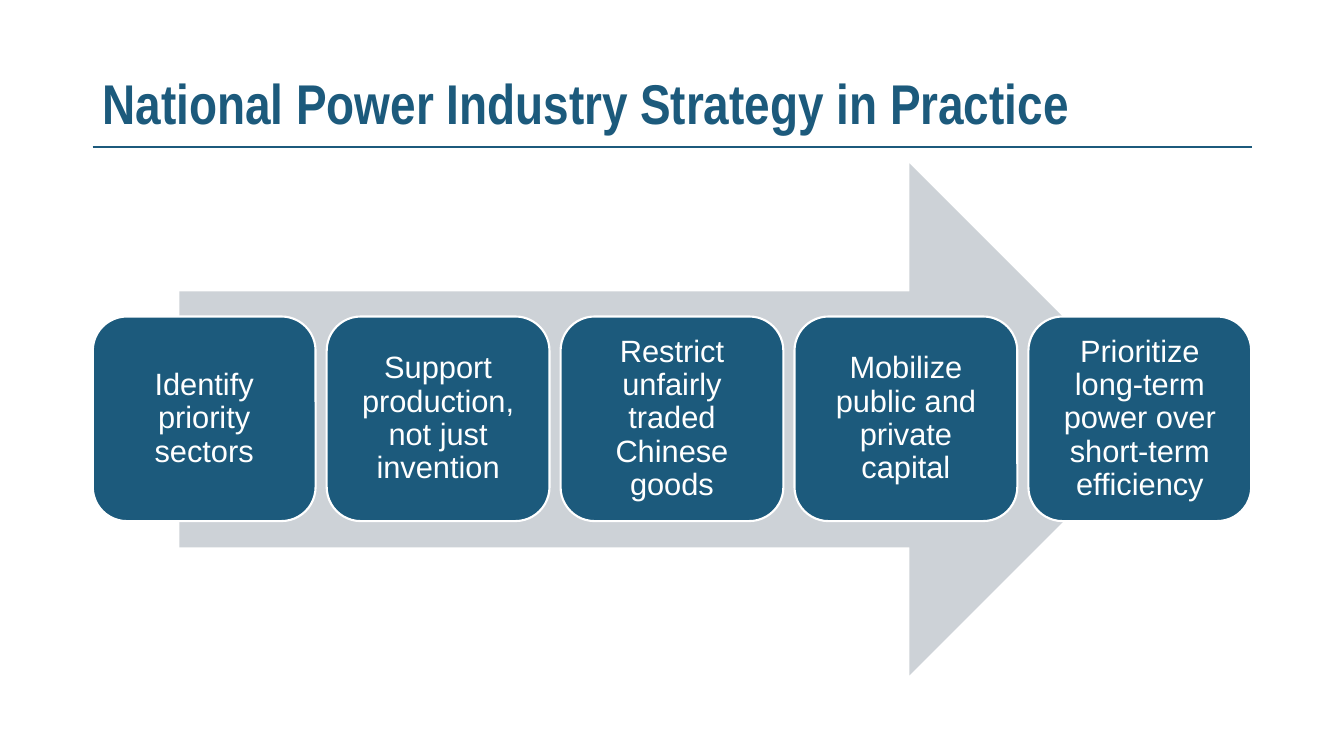
from pptx import Presentation
from pptx.dml.color import RGBColor
from pptx.enum.shapes import MSO_CONNECTOR, MSO_SHAPE
from pptx.enum.text import MSO_ANCHOR, PP_ALIGN
from pptx.oxml.ns import qn
from pptx.util import Inches, Pt
from lxml import etree

STRAIGHT = MSO_CONNECTOR.STRAIGHT
ARROW, ROUNDED = MSO_SHAPE.RIGHT_ARROW, MSO_SHAPE.ROUNDED_RECTANGLE
BOTTOM, MIDDLE = MSO_ANCHOR.BOTTOM, MSO_ANCHOR.MIDDLE
LEFT, CENTER = PP_ALIGN.LEFT, PP_ALIGN.CENTER
BLUE, GRAY, WHITE = "1C5A7C", "CDD2D7", "FFFFFF"


def color(value):
    return RGBColor.from_string(value)


def write_text(box, text, size, font, fill, bold=False, align=LEFT,
               anchor=MIDDLE, inset_x=0.1, inset_y=0.05):
    frame = box.text_frame
    frame.word_wrap = True
    frame.vertical_anchor = anchor
    frame.margin_left = frame.margin_right = Inches(inset_x)
    frame.margin_top = frame.margin_bottom = Inches(inset_y)
    para = frame.paragraphs[0]
    para.alignment = align
    para.line_spacing = 0.9
    span = para.add_run()
    span.text = text
    span.font.size = Pt(size)
    span.font.name = font
    span.font.bold = bold
    span.font.color.rgb = color(fill)


deck = Presentation()
deck.slide_width, deck.slide_height = Inches(13.33), Inches(7.5)
page = deck.slides.add_slide(deck.slide_layouts[6])

# Title and rule
rule = page.shapes.add_connector(STRAIGHT, Inches(0.92), Inches(1.46),
                                 Inches(12.42), Inches(1.46))
rule.line.color.rgb = color(BLUE)
rule.line.width = Pt(1.25)
etree.SubElement(rule._element.spPr, qn("a:effectLst"))

title = page.shapes.add_textbox(Inches(0.92), Inches(0.4),
                                Inches(11.5), Inches(1))
write_text(title, "National Power Industry Strategy in Practice", 40,
           "Arial Narrow", BLUE, bold=True, anchor=BOTTOM)

# Background arrow
arrow = page.shapes.add_shape(ARROW, Inches(1.78), Inches(1.62),
                              Inches(9.78), Inches(5.08))
arrow.shadow.inherit = False
arrow.fill.solid()
arrow.fill.fore_color.rgb = color(GRAY)
arrow.line.fill.background()

# Strategy steps
steps = [
    "Identify priority sectors",
    "Support production, not just invention",
    "Restrict unfairly traded Chinese goods",
    "Mobilize public and private capital",
    "Prioritize long-term power over short-term efficiency",
]
for index, step in enumerate(steps):
    box = page.shapes.add_shape(ROUNDED, Inches(0.92 + 2.32 * index),
                                Inches(3.14), Inches(2.21), Inches(2.03))
    box.shadow.inherit = False
    box.fill.solid()
    box.fill.fore_color.rgb = color(BLUE)
    box.line.color.rgb = color(WHITE)
    box.line.width = Pt(1.5)
    # The rounded corners add about 0.1 inch to these insets
    write_text(box, step, 22, "Arial", WHITE, align=CENTER,
               inset_x=0.09, inset_y=0.09)

deck.save("out.pptx")
